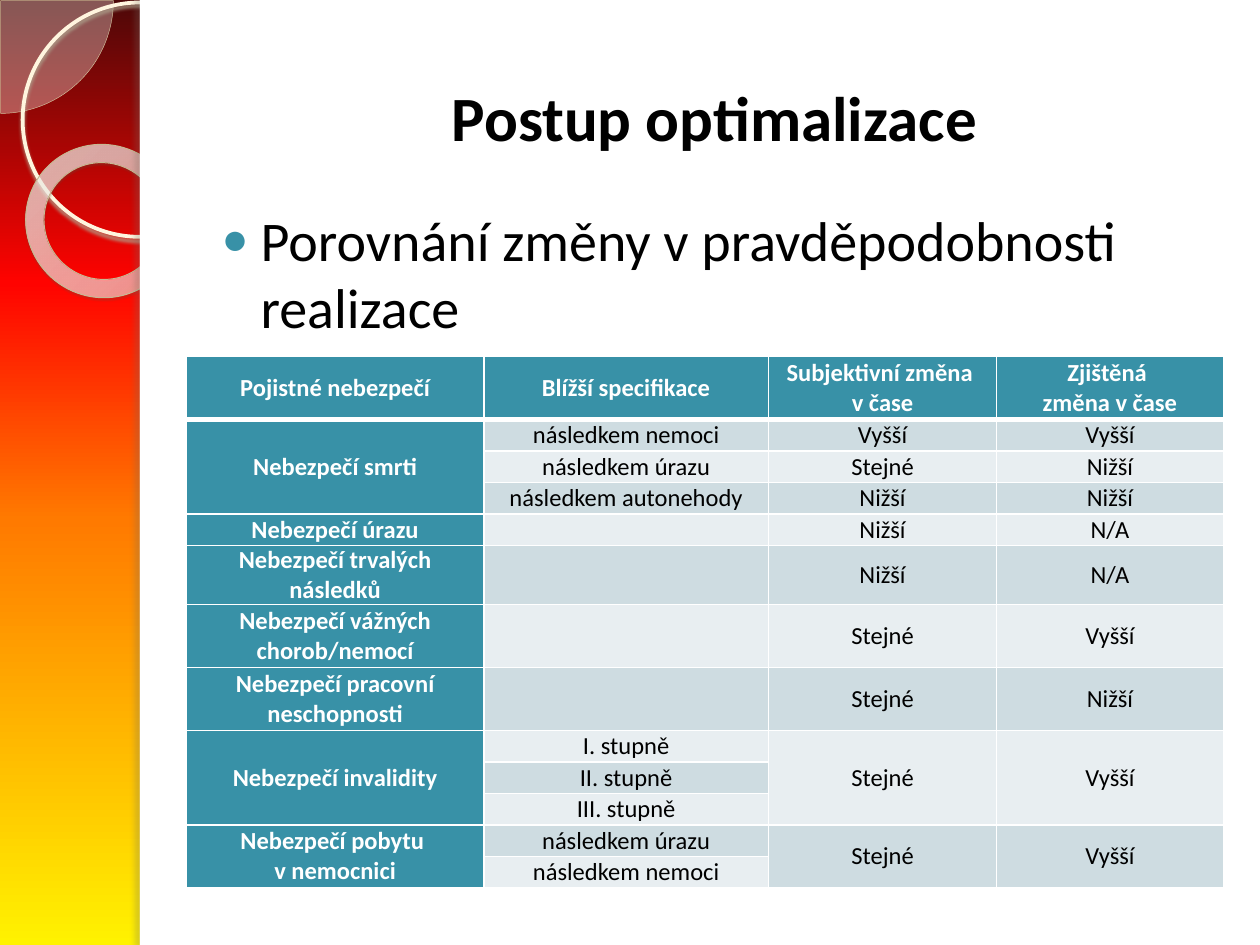
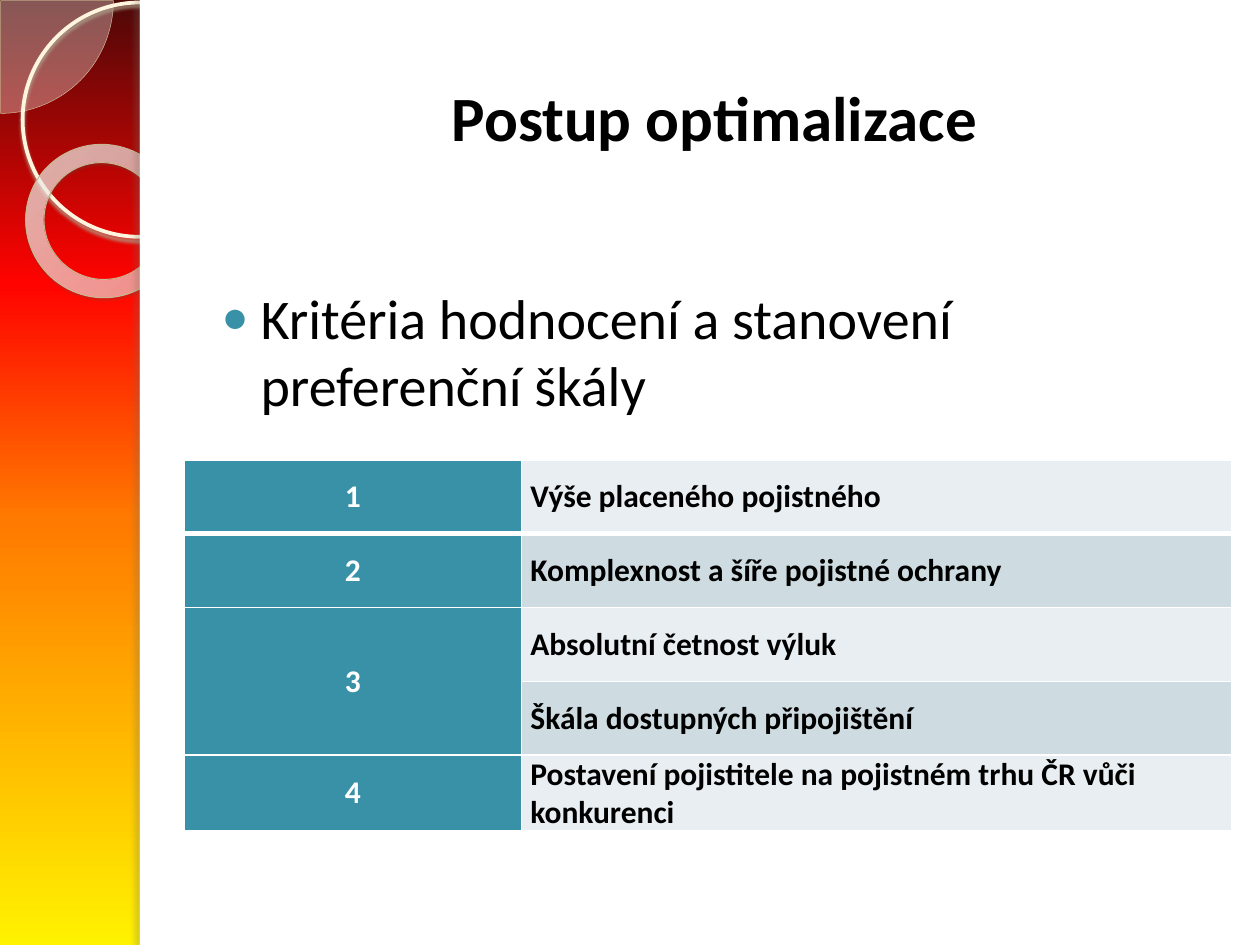
import lxml.etree
import pptx
import pptx.dml.color
import pptx.enum.shapes
import pptx.enum.text
import pptx.oxml.ns
import pptx.util

Inches = pptx.util.Inches
Pt = pptx.util.Pt
RGBColor = pptx.dml.color.RGBColor
Shape = pptx.enum.shapes.MSO_SHAPE
Align = pptx.enum.text.PP_ALIGN
Anchor = pptx.enum.text.MSO_ANCHOR
qn = pptx.oxml.ns.qn

FONT = "Calibri"
BLACK = RGBColor(0x00, 0x00, 0x00)
WHITE = RGBColor(0xFF, 0xFF, 0xFF)
TEAL = RGBColor(0x38, 0x91, 0xA7)
BAND_DARK = RGBColor(0xCE, 0xDC, 0xE1)
BAND_LIGHT = RGBColor(0xE8, 0xEE, 0xF1)
YELLOW = RGBColor(0xFF, 0xF2, 0x00)
ORANGE = RGBColor(0xFF, 0x7A, 0x00)
RED = RGBColor(0xFF, 0x03, 0x00)
MAROON = RGBColor(0x4D, 0x08, 0x08)
CREAM = RGBColor(0xFE, 0xFA, 0xF4)
SAND = RGBColor(0xD3, 0xC3, 0x9F)
RING_LINE = RGBColor(0xFF, 0xF5, 0xDE)
RING_SHADOW = RGBColor(0xB0, 0xA6, 0x8F)
DONUT_INNER = RGBColor(0xFF, 0xFC, 0xF6)
DONUT_MIDDLE = RGBColor(0xFF, 0xFE, 0xFB)
DONUT_OUTER = RGBColor(0xF0, 0xD2, 0x8E)
DONUT_LINE = RGBColor(0xC7, 0xB8, 0x93)
DONUT_SHADOW = RGBColor(0x5A, 0x54, 0x44)
EDGE_SHADOW = RGBColor(0x73, 0x6F, 0x63)

TITLE = "Postup optimalizace"

RISK_COLUMNS = [2.36, 2.26, 1.81, 1.8]
RISK_HEIGHTS = [0.5] + [0.25] * 5 + [0.5] * 2 + [0.25] * 5
RISK_ROWS = [
    ["Pojistné nebezpečí", "Blížší specifikace", "Subjektivní změna \vv čase", "Zjištěná \vzměna v čase"],
    ["Nebezpečí smrti", "následkem nemoci", "Vyšší", "Vyšší"],
    [None, "následkem úrazu", "Stejné", "Nižší"],
    [None, "následkem autonehody", "Nižší", "Nižší"],
    ["Nebezpečí úrazu", "", "Nižší", "N/A"],
    ["Nebezpečí trvalých následků", "", "Nižší", "N/A"],
    ["Nebezpečí vážných chorob/nemocí", "", "Stejné", "Vyšší"],
    ["Nebezpečí pracovní neschopnosti", "", "Stejné", "Nižší"],
    ["Nebezpečí invalidity", "I. stupně", "Stejné", "Vyšší"],
    [None, "II. stupně", None, None],
    [None, "III. stupně", None, None],
    ["Nebezpečí pobytu \vv nemocnici", "následkem úrazu", "Stejné", "Vyšší"],
    [None, "následkem nemoci", None, None],
]

CRITERIA_COLUMNS = [2.68, 5.64]
CRITERIA_HEIGHTS = [2.93 / 5] * 5
CRITERIA_ROWS = [
    ["1", "Výše placeného pojistného"],
    ["2", "Komplexnost a šíře pojistné ochrany"],
    ["3", "Absolutní četnost výluk"],
    [None, "Škála dostupných připojištění"],
    ["4", "Postavení pojistitele na pojistném trhu ČR vůči konkurenci"],
]


def add_element(parent, tag, **attributes):
    values = {name: str(value) for name, value in attributes.items()}
    return lxml.etree.SubElement(parent, qn(tag), values)


def add_color(parent, color, opacity=100):
    element = add_element(parent, "a:srgbClr", val=color)
    if opacity < 100:
        add_element(element, "a:alpha", val=opacity * 1000)


def set_gradient(fill, owner, stops):
    fill.gradient()
    gradient = next(owner.iter(qn("a:gradFill")))
    gradient.clear()
    stop_list = add_element(gradient, "a:gsLst")
    for position, color, opacity in stops:
        stop = add_element(stop_list, "a:gs", pos=position * 1000)
        add_color(stop, color, opacity)
    return gradient


def add_shadow(shape, color, opacity, blur, distance, angle):
    effects = shape.element.spPr.find(qn("a:effectLst"))
    shadow = add_element(effects, "a:outerShdw", blurRad=Pt(blur), dist=Pt(distance),
                         dir=angle * 60000, algn="ctr", rotWithShape=0)
    add_color(shadow, color, opacity)


def add_decoration(slide, kind, left, top, width, height, fill=None, line=None, line_width=0):
    shape = slide.shapes.add_shape(kind, Inches(left), Inches(top), Inches(width), Inches(height))
    shape.shadow.inherit = False
    if fill is None:
        shape.fill.background()
    else:
        shape.fill.solid()
        shape.fill.fore_color.rgb = fill
    if line is None:
        shape.line.fill.background()
    else:
        shape.line.color.rgb = line
        shape.line.width = Pt(line_width)
    return shape


def draw_side_band(slide):
    pie = add_decoration(slide, Shape.PIE, -0.89, -0.89, 1.79, 1.79, CREAM, SAND, 0.25)
    pie.adjustments[0] = 0
    pie.adjustments[1] = 54.02
    pie_color = next(pie.element.spPr.iter(qn("a:srgbClr")))
    add_element(pie_color, "a:alpha", val=33000)

    ring = add_decoration(slide, Shape.OVAL, 0.18, 0.02, 1.86, 1.86, None, RING_LINE, 2.15)
    add_shadow(ring, RING_SHADOW, 85, 2, 2, 90)

    donut = add_decoration(slide, Shape.DONUT, 0.2, 1.15, 1.23, 1.21, None, DONUT_LINE, 0.58)
    donut.adjustments[0] = 0.12
    donut.rotation = 38.6
    gradient = set_gradient(donut.fill, donut.element.spPr, [
        (0, DONUT_INNER, 70), (70, DONUT_MIDDLE, 55), (100, DONUT_OUTER, 60)])
    center = add_element(gradient, "a:path", path="circle")
    add_element(center, "a:fillToRect", l=-408000, t=-50000, r=508000, b=150000)
    add_shadow(donut, DONUT_SHADOW, 35, 1, 1.2, 75)

    panel = add_decoration(slide, Shape.RECTANGLE, 1.11, 0, 8.89, 7.5, WHITE)
    edge = add_decoration(slide, Shape.RECTANGLE, 1.11, 0, 0.08, 7.5, WHITE)
    add_shadow(edge, EDGE_SHADOW, 25, 3, 3, 180)
    return [pie, ring, donut, panel, edge]


def style_layout(presentation, layout):
    for placeholder in list(layout.placeholders):
        if placeholder.placeholder_format.idx:
            layout.shapes.element.remove(placeholder.element)
    gradient = set_gradient(layout.background.fill, layout.element, [
        (0, YELLOW, 100), (45, ORANGE, 100), (70, RED, 100), (100, MAROON, 100)])
    add_element(gradient, "a:lin", ang=270 * 60000, scaled=0)
    slide = presentation.slides.add_slide(layout)
    for position, shape in enumerate(draw_side_band(slide), start=2):
        layout.shapes.element.insert(position, shape.element)
    return slide


def format_runs(paragraph, size, color, bold=False):
    for run in paragraph.runs:
        run.font.name = FONT
        run.font.size = Pt(size)
        run.font.bold = bold
        run.font.color.rgb = color


def set_title(slide, text):
    title = slide.shapes.title
    title.left, title.top = Inches(1.57), Inches(0.3)
    title.width, title.height = Inches(8.2), Inches(1.25)
    title.text_frame.text = text
    title.text_frame.vertical_anchor = Anchor.MIDDLE
    paragraph = title.text_frame.paragraphs[0]
    paragraph.alignment = Align.CENTER
    format_runs(paragraph, 36, BLACK, True)


def add_bullet(slide, text, top):
    box = slide.shapes.add_textbox(Inches(1.57), Inches(top), Inches(8.2), Inches(1.25))
    box.text_frame.word_wrap = True
    box.text_frame.text = text
    paragraph = box.text_frame.paragraphs[0]
    paragraph.space_before = Pt(6)
    format_runs(paragraph, 32, BLACK)
    properties = paragraph._p.get_or_add_pPr()
    properties.set("marL", str(Inches(0.4)))
    properties.set("indent", str(Inches(-0.31)))
    add_color(add_element(properties, "a:buClr"), TEAL)
    add_element(properties, "a:buSzPct", val=80000)
    add_element(properties, "a:buFont", typeface="Arial")
    add_element(properties, "a:buChar", char="●")


def set_borders(cell, row):
    properties = cell._tc.get_or_add_tcPr()
    widths = {"a:lnL": 1, "a:lnR": 1, "a:lnT": 3 if row == 1 else 1, "a:lnB": 3 if row == 0 else 1}
    for position, (tag, width) in enumerate(widths.items()):
        border = add_element(properties, tag, w=Pt(width))
        add_color(add_element(border, "a:solidFill"), WHITE)
        properties.insert(position, border)


def fill_cell(cell, text, size, color, bold, alignment):
    cell.margin_left = cell.margin_right = Inches(0.07)
    cell.margin_top = cell.margin_bottom = 0
    cell.vertical_anchor = Anchor.MIDDLE
    cell.text_frame.text = text or ""
    paragraph = cell.text_frame.paragraphs[0]
    paragraph.alignment = alignment
    format_runs(paragraph, size, color, bold)
    if not text:
        add_element(paragraph._p, "a:endParaRPr", sz=size * 100)


def merge_gaps(table, rows):
    for column in range(len(rows[0])):
        start = 0
        for row in range(1, len(rows) + 1):
            if row < len(rows) and rows[row][column] is None:
                continue
            if row - start > 1:
                table.cell(start, column).merge(table.cell(row - 1, column))
            start = row


def add_banded_table(slide, left, top, columns, heights, rows, size,
                     has_header=False, body_bold=False, body_alignment=Align.CENTER):
    frame = slide.shapes.add_table(len(rows), len(columns), Inches(left), Inches(top),
                                   Inches(sum(columns)), Inches(sum(heights)))
    table = frame.table
    table.first_row = has_header
    table.first_col = True
    table.horz_banding = False
    for column, width in zip(table.columns, columns):
        column.width = Inches(width)
    for row, height in zip(table.rows, heights):
        row.height = Inches(height)
    for row, values in enumerate(rows):
        band = BAND_DARK if row % 2 else BAND_LIGHT
        for column, text in enumerate(values):
            cell = table.cell(row, column)
            heading = column == 0 or (has_header and row == 0)
            fill_cell(cell, text, size, WHITE if heading else BLACK, heading or body_bold,
                      Align.CENTER if heading else body_alignment)
            cell.fill.solid()
            cell.fill.fore_color.rgb = TEAL if heading else band
            set_borders(cell, row)
    merge_gaps(table, rows)


def main():
    presentation = pptx.Presentation()
    presentation.slide_width = Inches(10)
    presentation.slide_height = Inches(7.5)
    layout = presentation.slide_layouts[5]

    risk_slide = style_layout(presentation, layout)
    set_title(risk_slide, TITLE)
    add_bullet(risk_slide, "Porovnání změny v pravděpodobnosti realizace", 1.58)
    add_banded_table(risk_slide, 1.48, 2.83, RISK_COLUMNS, RISK_HEIGHTS, RISK_ROWS, 14,
                     has_header=True)

    criteria_slide = presentation.slides.add_slide(layout)
    set_title(criteria_slide, TITLE)
    add_bullet(criteria_slide, "Kritéria hodnocení a stanovení preferenční škály", 2.2)
    add_banded_table(criteria_slide, 1.46, 3.65, CRITERIA_COLUMNS, CRITERIA_HEIGHTS, CRITERIA_ROWS, 18,
                     body_bold=True, body_alignment=Align.LEFT)

    presentation.save("out.pptx")


if __name__ == "__main__":
    main()
